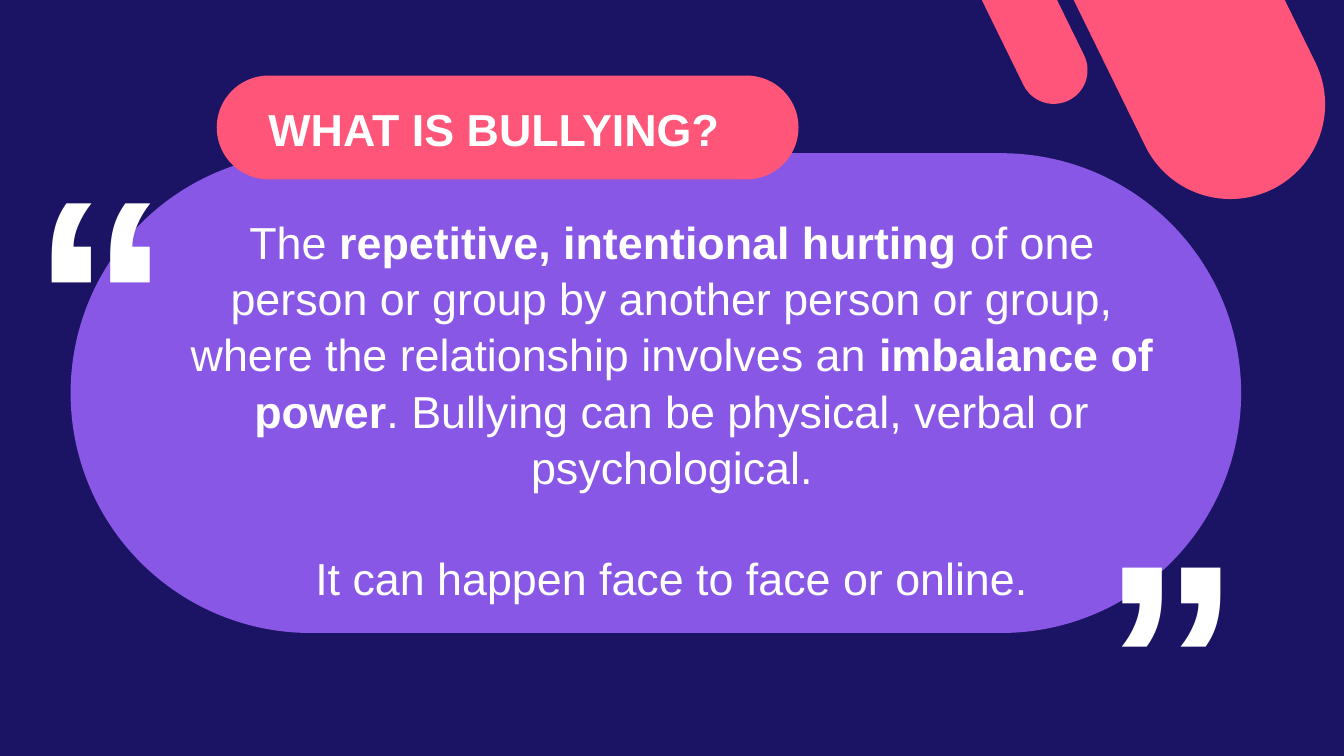
from pptx import Presentation
from pptx.dml.color import RGBColor
from pptx.enum.shapes import MSO_SHAPE
from pptx.enum.text import MSO_ANCHOR, PP_ALIGN
from pptx.util import Inches, Pt

NAVY = RGBColor(0x1B, 0x14, 0x64)
PURPLE = RGBColor(0x88, 0x57, 0xE5)
PINK = RGBColor(0xFF, 0x55, 0x7A)
ROSE = RGBColor(0xFF, 0x55, 0x78)
WHITE = RGBColor(0xFF, 0xFF, 0xFF)
PILL = MSO_SHAPE.ROUNDED_RECTANGLE
TOP = MSO_ANCHOR.TOP
LEFT, CENTER = PP_ALIGN.LEFT, PP_ALIGN.CENTER
WIDE, HIGH = 13.33, 7.5
TILT = 153.9
SIZE = 32
LINE = 1.05
GAP = 38.5
BODY = [
    [("The ", False), ("repetitive, intentional hurting ", True),
     ("of one person or group by another person or group, "
      "where the relationship involves an ", False),
     ("imbalance of power", True),
     (". Bullying can be physical, verbal or psychological.", False)],
    [("It can happen face to face or online.", False)],
]


def place(shape, box):
    """Set the left, top, width and height of a shape in inches."""
    shape.left, shape.top, shape.width, shape.height = map(Inches, box)


def add_pill(slide, box, fill, turn=0):
    """Add a fully rounded bar."""
    pill = slide.shapes.add_shape(PILL, *map(Inches, box))
    pill.adjustments[0] = 0.5
    pill.rotation = turn
    pill.shadow.inherit = False
    pill.fill.solid()
    pill.fill.fore_color.rgb = fill
    pill.line.fill.background()


def style(para, size, align, bold=None):
    """Set the font and alignment of a paragraph."""
    font = para.font
    font.name, font.size, font.bold = "Arial", Pt(size), bold
    font.color.rgb = WHITE
    para.alignment = align


def add_box(slide, box):
    """Add a wrapping text box and return it."""
    shape = slide.shapes.add_textbox(*map(Inches, box))
    shape.text_frame.word_wrap = True
    return shape


def add_quote(slide, box, turn=0):
    """Add a large quotation mark."""
    mark = add_box(slide, box)
    mark.rotation = turn
    para = mark.text_frame.paragraphs[0]
    para.text = "“"
    style(para, 200, LEFT, True)


def add_body(slide, box):
    """Add the centred definition with its bold phrases."""
    frame = add_box(slide, box).text_frame
    for i, runs in enumerate(BODY):
        para = frame.add_paragraph() if i else frame.paragraphs[0]
        style(para, SIZE, CENTER)
        para.line_spacing = LINE
        para.space_before = Pt(GAP if i else 0)
        for text, bold in runs:
            run = para.add_run()
            run.text = text
            run.font.bold = bold


def set_title(slide, box):
    """Fill the title and bring it in front of its bar."""
    title = slide.shapes.title
    place(title, box)
    frame = title.text_frame
    frame.word_wrap = True
    frame.vertical_anchor = TOP
    para = frame.paragraphs[0]
    para.text = "WHAT IS BULLYING?"
    style(para, SIZE, CENTER, True)
    para.line_spacing = LINE
    slide.shapes._spTree.append(title._element)


def main():
    """Build the slide and save it."""
    deck = Presentation()
    deck.slide_width, deck.slide_height = Inches(WIDE), Inches(HIGH)
    slide = deck.slides.add_slide(deck.slide_layouts[5])
    slide.background.fill.solid()
    slide.background.fill.fore_color.rgb = NAVY
    add_pill(slide, (0.7, 1.52, 11.61, 4.76), PURPLE)
    add_pill(slide, (10.55, -2.98, 1.88, 5.12), PINK, TILT)
    add_pill(slide, (9.43, -2.6, 0.67, 3.79), PINK, TILT)
    add_body(slide, (1.76, 2.05, 9.81, 3.87))
    add_quote(slide, (0.21, 1.11, 1.88, 3.47))
    add_quote(slide, (10.53, 3.87, 1.88, 3.47), 180)
    add_pill(slide, (2.15, 0.75, 5.77, 1.03), ROSE)
    set_title(slide, (0.38, 0.93, 9.04, 0.64))
    main_end = "out.pptx"
    deck.save("out.pptx")


if __name__ == "__main__":
    main()
